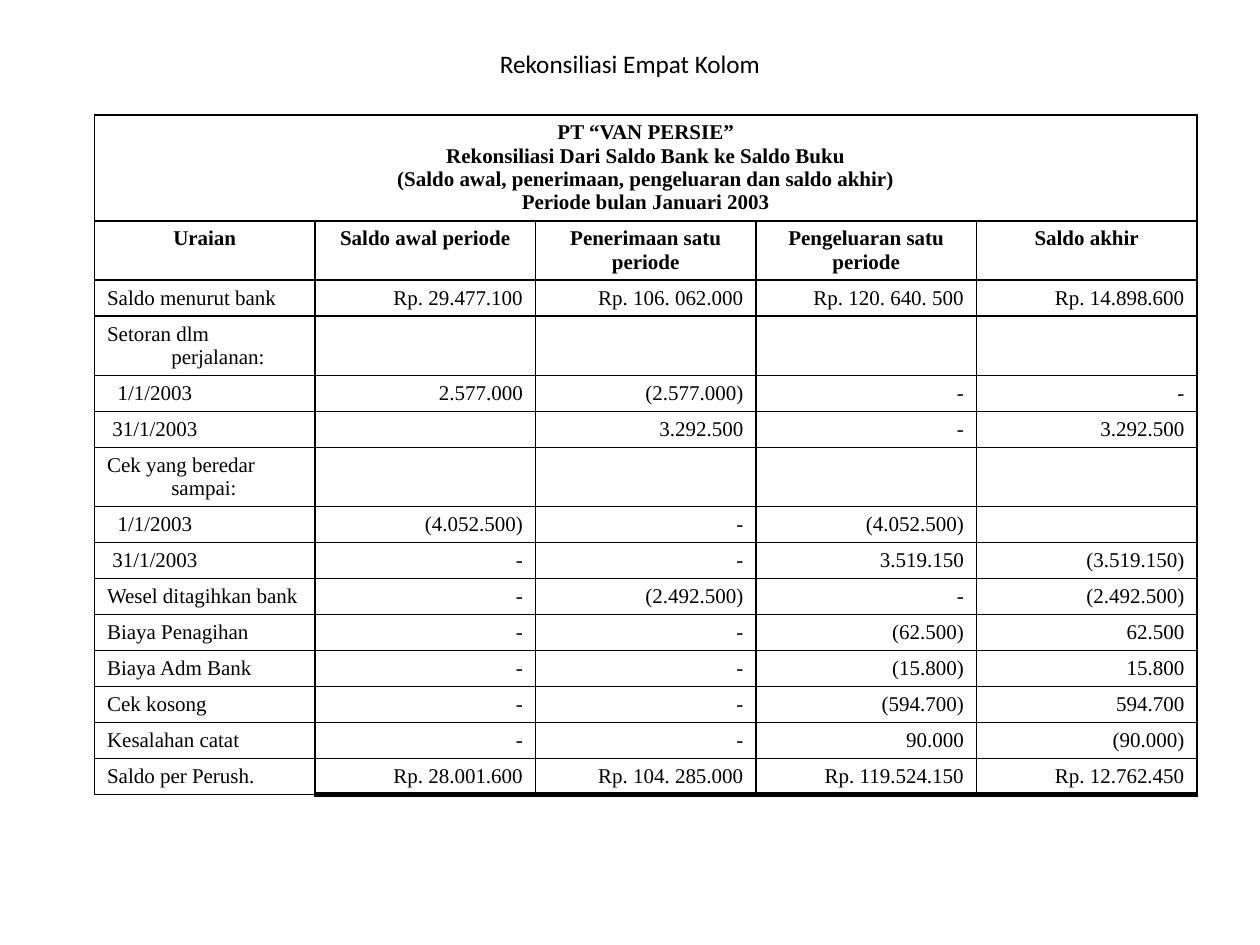
from lxml.etree import SubElement
from pptx import Presentation
from pptx.dml.color import RGBColor
from pptx.enum.text import MSO_ANCHOR, MSO_AUTO_SIZE, PP_ALIGN
from pptx.oxml.ns import qn
from pptx.util import Pt

BLACK = "000000"
HANGING = 36.7
HEADING = [
    "PT “VAN PERSIE”",
    "Rekonsiliasi Dari Saldo Bank ke Saldo Buku",
    "(Saldo awal, penerimaan, pengeluaran dan saldo akhir)",
    "Periode bulan Januari 2003",
]
COLUMN_LABELS = [
    "Uraian",
    "Saldo awal periode",
    "Penerimaan satu\nperiode",
    "Pengeluaran satu\nperiode",
    "Saldo akhir",
]
# Row height, indent of the label, label, then the four amounts
ENTRIES = [
    (19.4, 0, "Saldo menurut bank", "Rp. 29.477.100", "Rp. 106. 062.000",
     "Rp. 120. 640. 500", "Rp. 14.898.600"),
    (19.4, 0, "Setoran dlm perjalanan:", "", "", "", ""),
    (14.4, 6, "1/1/2003", "2.577.000", "(2.577.000)", "-", "-"),
    (19.4, 3, "31/1/2003", "", "3.292.500", "-", "3.292.500"),
    (19.4, 0, "Cek yang beredar sampai:", "", "", "", ""),
    (19.4, 6, "1/1/2003", "(4.052.500)", "-", "(4.052.500)", ""),
    (14.4, 3, "31/1/2003", "-", "-", "3.519.150", "(3.519.150)"),
    (19.4, 0, "Wesel ditagihkan bank", "-", "(2.492.500)", "-", "(2.492.500)"),
    (14.4, 0, "Biaya Penagihan", "-", "-", "(62.500)", "62.500"),
    (14.4, 0, "Biaya Adm Bank", "-", "-", "(15.800)", "15.800"),
    (14.4, 0, "Cek kosong", "-", "-", "(594.700)", "594.700"),
    (14.4, 0, "Kesalahan catat", "-", "-", "90.000", "(90.000)"),
    (14.4, 0, "Saldo per Perush.", "Rp. 28.001.600", "Rp. 104. 285.000",
     "Rp. 119.524.150", "Rp. 12.762.450"),
]


def color(hex_code):
    return RGBColor.from_string(hex_code)


def set_font(paragraph, name, size, bold=False):
    font = paragraph.font
    font.name, font.size, font.bold = name, Pt(size), bold
    font.color.rgb = color(BLACK)


def set_borders(cell, bottom_width=1):
    properties = cell._tc.get_or_add_tcPr()
    for side, width in (("L", 1), ("R", 1), ("T", 1), ("B", bottom_width)):
        line = SubElement(properties, qn(f"a:ln{side}"), w=str(Pt(width)))
        fill = SubElement(line, qn("a:solidFill"))
        SubElement(fill, qn("a:srgbClr"), val=BLACK)


def fill_cell(cell, text, align, bold=False, indent=0, bottom_width=1):
    set_borders(cell, bottom_width)
    cell.fill.background()
    cell.text = text
    for paragraph in cell.text_frame.paragraphs:
        paragraph.alignment = align
        set_font(paragraph, "Times New Roman", 12, bold)
        properties = paragraph._p.get_or_add_pPr()
        properties.set("marL", str(Pt(HANGING)))
        properties.set("indent", str(Pt(indent - HANGING)))


def place_title(slide, left, top, width, height):
    title = slide.shapes.title
    title.left, title.top, title.width, title.height = map(Pt, (left, top, width, height))
    frame = title.text_frame
    frame.text = "Rekonsiliasi Empat Kolom"
    frame.word_wrap = True
    frame.auto_size = MSO_AUTO_SIZE.NONE
    frame.vertical_anchor = MSO_ANCHOR.MIDDLE
    paragraph = frame.paragraphs[0]
    paragraph.alignment = PP_ALIGN.CENTER
    set_font(paragraph, "Calibri", 14.4)


def add_reconciliation(slide, left, top, width, height):
    column_count = len(COLUMN_LABELS)
    frame = slide.shapes.add_table(
        len(ENTRIES) + 2, column_count, Pt(left), Pt(top), Pt(width), Pt(height))
    table = frame.table
    table.first_row = table.horz_banding = False
    for column in table.columns:
        column.width = Pt(width / column_count)
    row_heights = [49, 19.4] + [entry[0] for entry in ENTRIES]
    for row, row_height in zip(table.rows, row_heights):
        row.height = Pt(row_height)
    frame.height = Pt(height)

    table.cell(0, 0).merge(table.cell(0, column_count - 1))
    fill_cell(table.cell(0, 0), "\n".join(HEADING), PP_ALIGN.CENTER, bold=True)
    for column in range(1, column_count):
        set_borders(table.cell(0, column))
    for column, label in enumerate(COLUMN_LABELS):
        fill_cell(table.cell(1, column), label, PP_ALIGN.CENTER, bold=True)

    for row, (_, indent, label, *amounts) in enumerate(ENTRIES, start=2):
        fill_cell(table.cell(row, 0), label, PP_ALIGN.LEFT, indent=indent)
        is_total = row == len(ENTRIES) + 1
        for column, amount in enumerate(amounts, start=1):
            fill_cell(table.cell(row, column), amount, PP_ALIGN.RIGHT,
                      bottom_width=3 if is_total else 1)


def main():
    presentation = Presentation()
    presentation.slide_width, presentation.slide_height = Pt(720), Pt(540)
    slide = presentation.slides.add_slide(presentation.slide_layouts[5])
    place_title(slide, 45, 24, 630, 25)
    add_reconciliation(slide, 54, 65.7, 630, 410.4)
    presentation.save("out.pptx")


if __name__ == "__main__":
    main()
